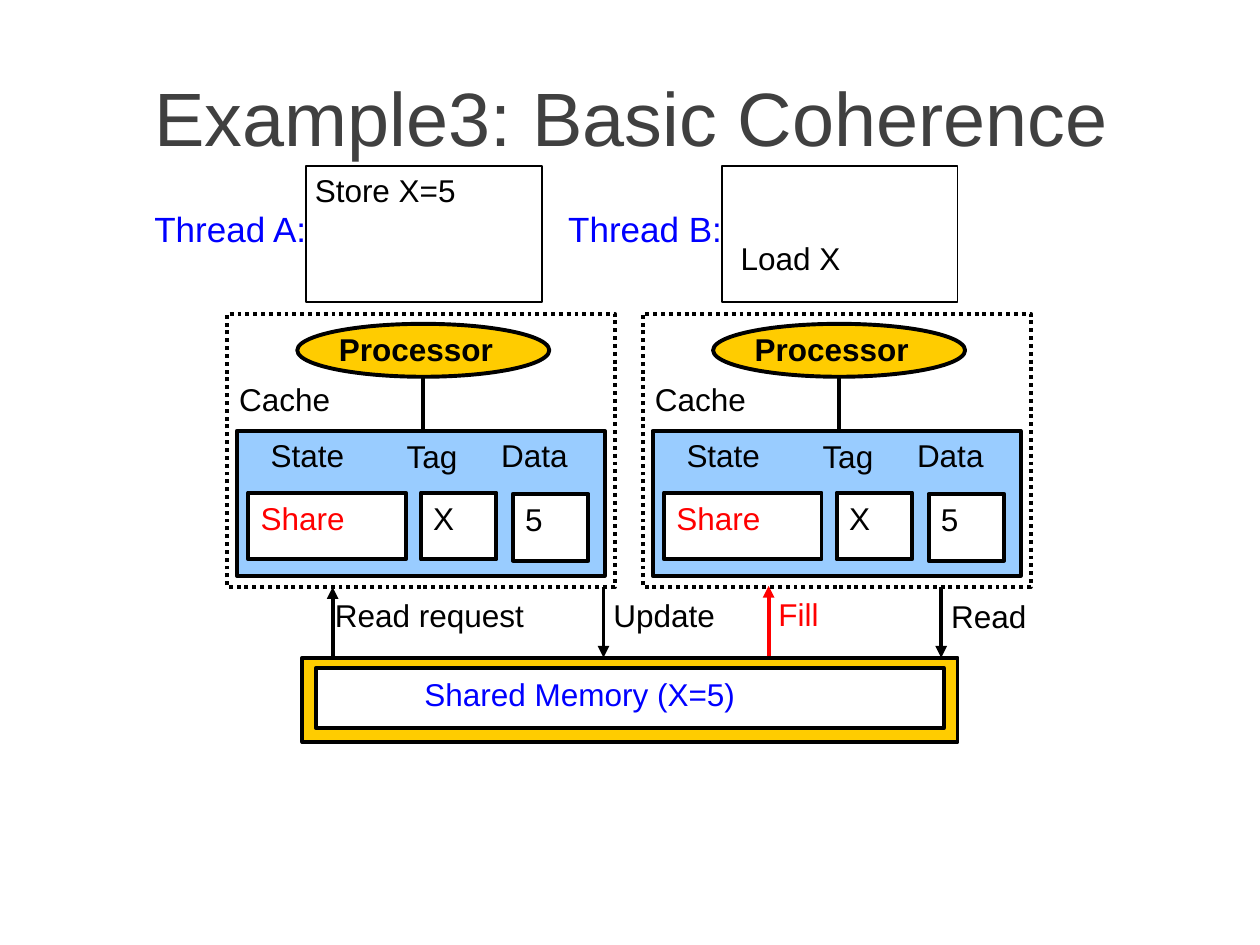
import dataclasses
import typing

import lxml.etree
import pptx
import pptx.dml.color
import pptx.enum.dml
import pptx.enum.shapes
import pptx.enum.text
import pptx.oxml.ns
import pptx.util

Inches = pptx.util.Inches
Pt = pptx.util.Pt
RGBColor = pptx.dml.color.RGBColor
Align = pptx.enum.text.PP_ALIGN
Anchor = pptx.enum.text.MSO_ANCHOR
Shape = pptx.enum.shapes.MSO_SHAPE

BLACK = RGBColor(0, 0, 0)
WHITE = RGBColor(255, 255, 255)
GRAY = RGBColor(0x40, 0x40, 0x40)
GOLD = RGBColor(0xFF, 0xCC, 0)
SKY = RGBColor(0x99, 0xCC, 0xFF)
BLUE = RGBColor(0, 0, 255)
RED = RGBColor(255, 0, 0)
FONT = "Arial"
NODE_PITCH = 3.3


@dataclasses.dataclass
class Label:
    text: str
    left: float
    top: float
    width: float
    height: float = 0.5
    color: RGBColor = BLACK
    size: float = 18
    bold: bool = False
    wrap: bool = True
    align: Align = Align.LEFT
    anchor: Anchor = Anchor.TOP


@dataclasses.dataclass
class Field:
    name: str
    name_left: float
    name_top: float
    name_width: float
    value: str
    left: float
    top: float
    width: float
    color: RGBColor = BLACK


@dataclasses.dataclass
class Message:
    label: Label
    x: float
    start: float
    tip: float


FIELDS = [
    Field("Tag", 3.13, 3.42, 0.97, "X", 3.34, 3.91, 0.6),
    Field("State", 2.05, 3.41, 1.02, "Share", 1.97, 3.91, 1.25, RED),
    Field("Data", 3.88, 3.41, 0.97, "5", 4.07, 3.92, 0.6),
]

MESSAGES = [
    Message(Label("Read", 7.45, 4.69, 1), 7.47, 4.66, 5.22),
    Message(Label("Update", 4.77, 4.68, 1.28), 4.79, 4.66, 5.22),
    Message(Label("Read request", 2.56, 4.68, 2.61), 2.64, 5.22, 4.66),
    Message(Label("Fill", 6.08, 4.67, 0.63, color=RED), 6.1, 5.21, 4.65),
]


def write(shape: typing.Any, label: Label) -> None:
    frame = shape.text_frame
    frame.word_wrap = label.wrap
    frame.auto_size = pptx.enum.text.MSO_AUTO_SIZE.NONE
    frame.vertical_anchor = label.anchor
    frame.text = label.text
    para = frame.paragraphs[0]
    para.alignment = label.align
    para.font.name = FONT
    para.font.size = Pt(label.size)
    para.font.bold = label.bold
    para.font.color.rgb = label.color


def add_label(shapes: typing.Any, label: Label) -> None:
    box = shapes.add_textbox(
        Inches(label.left), Inches(label.top), Inches(label.width), Inches(label.height)
    )
    write(box, label)


def add_box(
    shapes: typing.Any,
    left: float,
    top: float,
    width: float,
    height: float,
    fill: typing.Optional[RGBColor] = None,
    line_width: float = 2.25,
    kind: Shape = Shape.RECTANGLE,
) -> typing.Any:
    box = shapes.add_shape(kind, Inches(left), Inches(top), Inches(width), Inches(height))
    box.shadow.inherit = False
    if fill is None:
        box.fill.background()
    else:
        box.fill.solid()
        box.fill.fore_color.rgb = fill
    box.line.color.rgb = BLACK
    box.line.width = Pt(line_width)
    return box


def add_line(
    shapes: typing.Any, x: float, start: float, end: float, color: RGBColor = BLACK, arrow: bool = False
) -> None:
    line = shapes.add_connector(
        pptx.enum.shapes.MSO_CONNECTOR.STRAIGHT, Inches(x), Inches(start), Inches(x), Inches(end)
    )
    line.line.color.rgb = color
    line.line.width = Pt(2.25)
    if arrow:
        outline = line.line._get_or_add_ln()
        lxml.etree.SubElement(outline, pptx.oxml.ns.qn("a:tailEnd"), type="triangle")
    lxml.etree.SubElement(line._element.spPr, pptx.oxml.ns.qn("a:effectLst"))


def add_cache(shapes: typing.Any, shift: float) -> None:
    group = shapes.add_group_shape().shapes
    add_box(group, 1.88 + shift, 3.42, 2.92, 1.15, SKY)
    for field in FIELDS:
        left = field.left + shift
        cell = add_box(group, left, field.top, field.width, 0.53, WHITE)
        write(cell, Label(field.value, left, field.top, field.width, color=field.color))
        add_label(group, Label(field.name, field.name_left + shift, field.name_top, field.name_width))


def add_node(shapes: typing.Any, thread: str, shift: float) -> None:
    add_box(shapes, 2.36 + shift, 2.57, 2, 0.42, GOLD, kind=Shape.OVAL)
    add_label(shapes, Label("Cache", 1.8 + shift, 2.97, 1.17))
    add_label(
        shapes,
        Label("Processor", 2.59 + shift, 2.57, 1.42, 0.4, bold=True, wrap=False,
              align=Align.CENTER, anchor=Anchor.MIDDLE),
    )
    add_box(shapes, 2.43 + shift, 1.32, 1.87, 1.08, line_width=1)
    frame = add_box(shapes, 1.8 + shift, 2.49, 3.08, 2.17)
    frame.line.dash_style = pptx.enum.dml.MSO_LINE.ROUND_DOT
    add_cache(shapes, shift)
    add_line(shapes, 3.36 + shift, 3, 3.42)
    add_label(
        shapes,
        Label(thread, 1.11 + shift, 1.6, 1.42, 0.43, BLUE, 20, wrap=False, align=Align.RIGHT),
    )


def add_title(page: typing.Any) -> None:
    label = Label("Example3: Basic Coherence", 0.3, 0.67, 9.42, 0.5, GRAY, 43.2,
                  align=Align.CENTER, anchor=Anchor.MIDDLE)
    title = page.shapes.title
    title.left, title.top = Inches(label.left), Inches(label.top)
    title.width, title.height = Inches(label.width), Inches(label.height)
    write(title, label)


def main() -> None:
    deck = pptx.Presentation()
    deck.slide_width, deck.slide_height = Inches(10), Inches(7.5)
    page = deck.slides.add_slide(deck.slide_layouts[5])
    shapes = page.shapes
    add_title(page)
    add_box(shapes, 2.4, 5.22, 5.2, 0.67, GOLD)
    add_box(shapes, 2.51, 5.3, 4.98, 0.48, WHITE)
    add_label(shapes, Label("Shared Memory (X=5)", 3.27, 5.31, 3.49, color=BLUE))
    for index, thread in enumerate(["Thread A:", "Thread B:"]):
        add_node(shapes, thread, index * NODE_PITCH)
    add_label(shapes, Label("Store X=5", 2.4, 1.31, 1.69))
    add_label(shapes, Label("Load X", 5.78, 1.85, 1.26))
    for message in MESSAGES:
        add_label(shapes, message.label)
        add_line(shapes, message.x, message.start, message.tip, message.label.color, arrow=True)
    deck.save("out.pptx")


if __name__ == "__main__":
    main()
